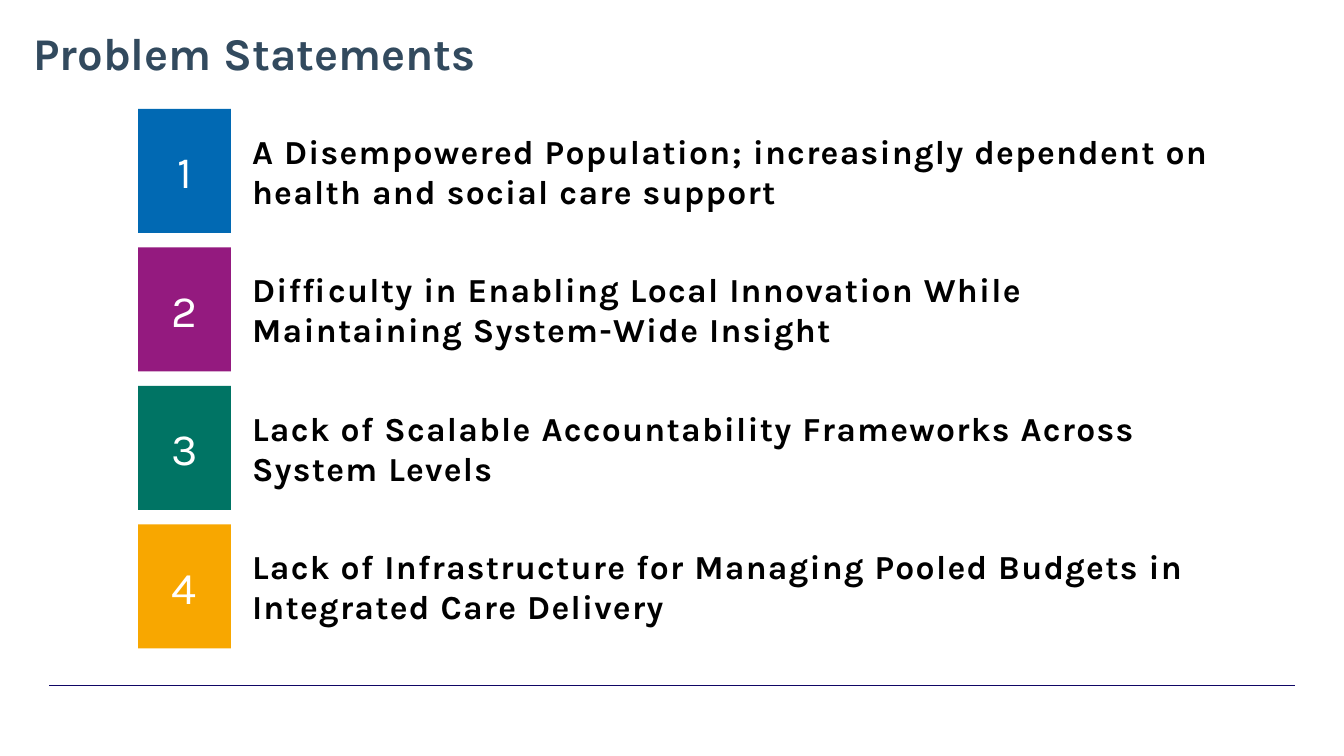
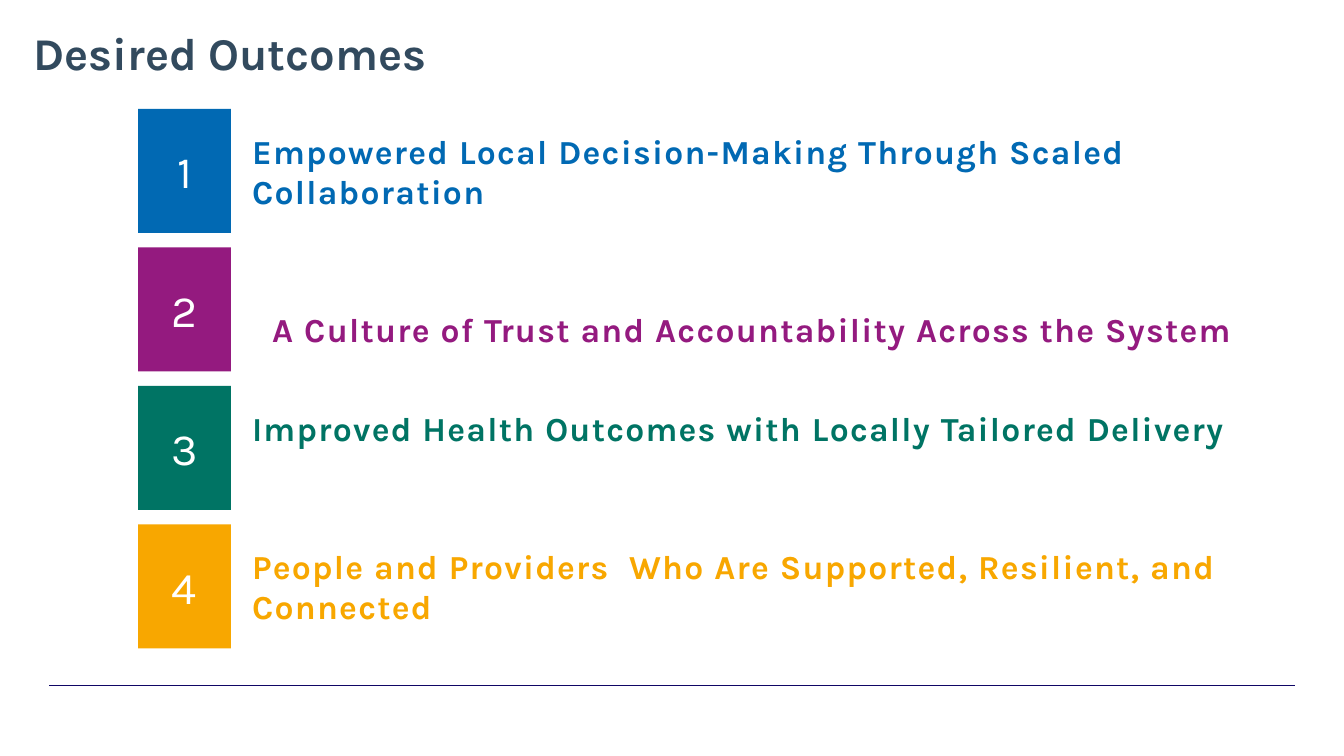
from lxml import etree
from pptx import Presentation
from pptx.dml.color import RGBColor
from pptx.enum.shapes import MSO_CONNECTOR, MSO_SHAPE
from pptx.enum.text import MSO_ANCHOR, MSO_AUTO_SIZE, PP_ALIGN
from pptx.oxml.ns import qn
from pptx.util import Pt

PX = 9144  # 100 px to the inch
FONT = "Karla"
WHITE = RGBColor(0xFF, 0xFF, 0xFF)
BLACK = RGBColor(0x00, 0x00, 0x00)
SLATE = RGBColor(0x32, 0x4A, 0x5E)
NAVY = RGBColor(0x0F, 0x06, 0x65)
BLUE = RGBColor(0x01, 0x69, 0xB3)
PURPLE = RGBColor(0x94, 0x1A, 0x7F)
GREEN = RGBColor(0x00, 0x74, 0x64)
AMBER = RGBColor(0xF8, 0xA7, 0x00)
HUES = [BLUE, PURPLE, GREEN, AMBER]

# Row grid
TOP, STEP, HIGH = 108, 137.4, 123

# Each row: text, then left, top and bottom inset
SLIDES = [
    ("Problem Statements", [BLACK] * 4, [
        ("A Disempowered Population; increasingly dependent on health and social care support", 0, 0, 0),
        ("Difficulty in Enabling Local Innovation While Maintaining System-Wide Insight", 0, 0, 0),
        ("Lack of Scalable Accountability Frameworks Across System Levels", 0, 0, 0),
        ("Lack of Infrastructure for Managing Pooled Budgets in Integrated Care Delivery", 0, 0, 0),
    ]),
    ("Desired Outcomes", HUES, [
        ("Empowered Local Decision-Making Through Scaled Collaboration", 0, 0, 0),
        ("A Culture of Trust and Accountability Across the System", 20, 40, 0),
        ("Improved Health Outcomes with Locally Tailored Delivery", 0, 0, 40),
        ("People and Providers  Who Are Supported, Resilient, and Connected", 0, 0, 0),
    ]),
]


def px(*sizes):
    return [round(size * PX) for size in sizes]


def write(shape, text, size, color, bold, align, inset):
    frame = shape.text_frame
    frame.word_wrap = True
    frame.auto_size = MSO_AUTO_SIZE.NONE
    frame.vertical_anchor = MSO_ANCHOR.MIDDLE
    (frame.margin_left, frame.margin_top,
     frame.margin_right, frame.margin_bottom) = px(*inset)
    para = frame.paragraphs[0]
    para.alignment = align
    run = para.add_run()
    run.text = text
    run.font.name = FONT
    run.font.size = Pt(size)
    run.font.bold = bold
    run.font.color.rgb = color
    return run


deck = Presentation()
deck.slide_width, deck.slide_height = px(1333, 750)

for title, inks, rows in SLIDES:
    slide = deck.slides.add_slide(deck.slide_layouts[5])
    shapes = slide.shapes

    # Footer rule
    rule = shapes.add_connector(MSO_CONNECTOR.STRAIGHT, *px(49, 680, 1284, 680))
    rule.line.color.rgb = NAVY
    rule.line.width = Pt(0.5)
    etree.SubElement(rule._element.spPr, qn("a:effectLst"))

    # Title
    head = shapes.title
    head.left, head.top, head.width, head.height = px(33, 32, 1251, 46)
    write(head, title, 32.4, SLATE, True, PP_ALIGN.LEFT, (0, 0, 0, 0))
    head.text_frame.paragraphs[0].line_spacing = 0.9

    # Numbered tiles and their statements
    tiles = shapes.add_group_shape()
    for i, (text, left, top, bottom) in enumerate(rows):
        y = TOP + i * STEP
        tile = tiles.shapes.add_shape(MSO_SHAPE.RECTANGLE, *px(137, y, 92, HIGH))
        tile.shadow.inherit = False
        tile.fill.solid()
        tile.fill.fore_color.rgb = HUES[i]
        tile.line.fill.background()
        write(tile, str(i + 1), 32, WHITE, False, PP_ALIGN.CENTER, (16, 12, 16, 12))

        box = shapes.add_textbox(*px(250, y, 978, HIGH))
        run = write(box, text, 24, inks[i], True, PP_ALIGN.LEFT, (left, top, 0, bottom))
        run._r.get_or_add_rPr().set("spc", "90")

deck.save("out.pptx")
